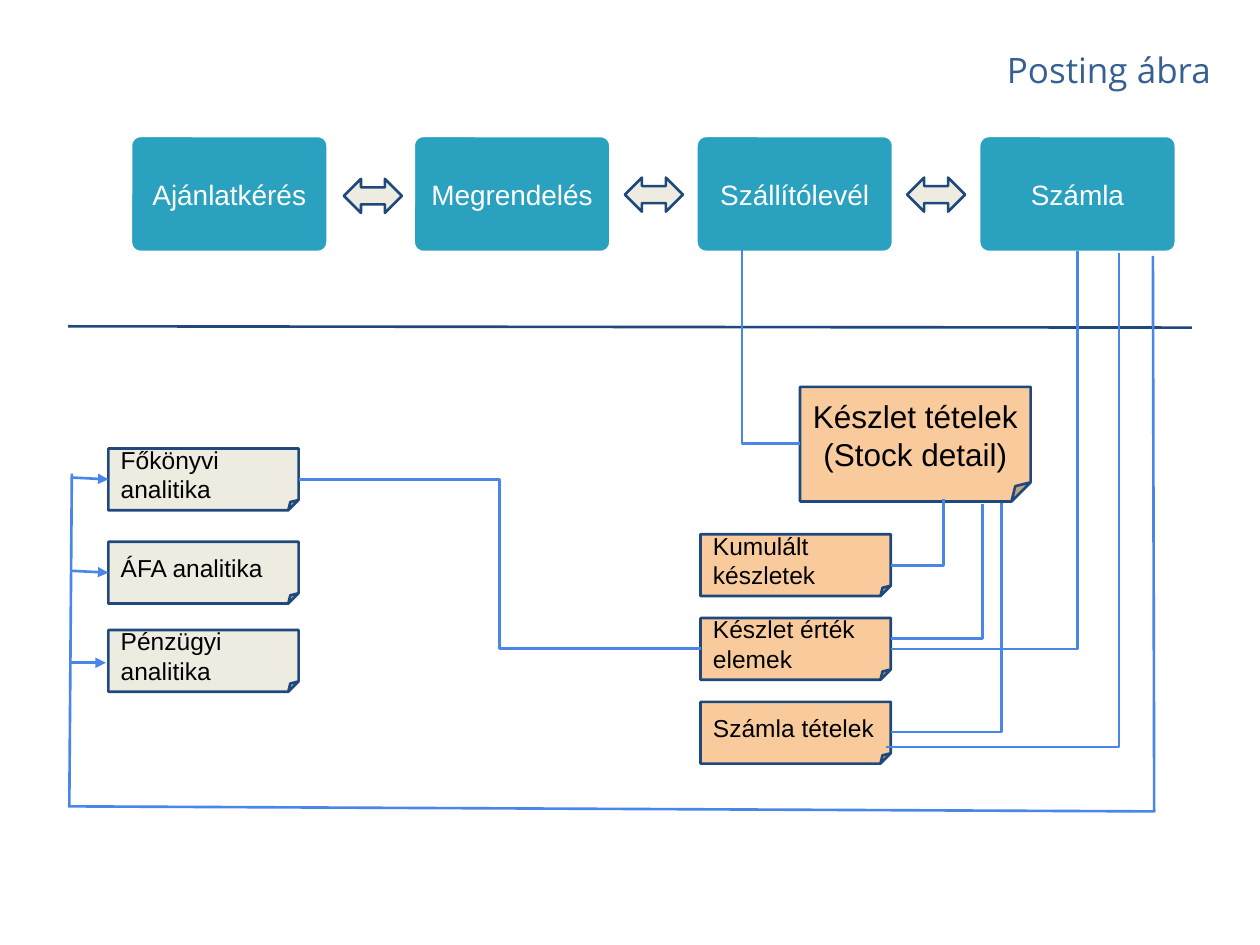
from lxml import etree
from pptx import Presentation
from pptx.dml.color import RGBColor
from pptx.enum.shapes import MSO_CONNECTOR, MSO_SHAPE
from pptx.enum.text import MSO_ANCHOR, PP_ALIGN
from pptx.oxml import parse_xml
from pptx.oxml.ns import nsdecls, qn
from pptx.util import Inches, Pt

STRAIGHT, ELBOW = MSO_CONNECTOR.STRAIGHT, MSO_CONNECTOR.ELBOW
CARD, NOTE, ARROW = (MSO_SHAPE.ROUNDED_RECTANGLE, MSO_SHAPE.FOLDED_CORNER,
                     MSO_SHAPE.LEFT_RIGHT_ARROW)
LEFT, CENTER, RIGHT = PP_ALIGN.LEFT, PP_ALIGN.CENTER, PP_ALIGN.RIGHT
MIDDLE = MSO_ANCHOR.MIDDLE
TEAL, NAVY, BLUE = "2AA2BF", "1F497D", "4A86E8"
CREAM, PEACH, WHITE, BLACK = "EEECE1", "F9CB9C", "FFFFFF", "000000"
color = RGBColor.from_string

deck = Presentation()
deck.slide_width, deck.slide_height = Inches(10), Inches(7.5)
page = deck.slides.add_slide(deck.slide_layouts[6])


def add_box(kind, place, fill, border, lines=(), size=14, ink=BLACK,
            align=LEFT, margin=0.1, weight=1.5):
    box = page.shapes.add_shape(kind, *map(Inches, place))
    box.shadow.inherit = False
    box.fill.solid()
    box.fill.fore_color.rgb = color(fill)
    box.line.color.rgb = color(border)
    box.line.width = Pt(weight)
    frame = box.text_frame
    frame.word_wrap = True
    frame.vertical_anchor = MIDDLE
    frame.margin_left = frame.margin_right = Inches(margin)
    frame.margin_top = frame.margin_bottom = Inches(margin)
    for number, line in enumerate(lines):
        para = frame.add_paragraph() if number else frame.paragraphs[0]
        para.text = line
        para.alignment = align
        para.font.name = "Arial"
        para.font.size = Pt(size)
        para.font.color.rgb = color(ink)
    return box


def add_line(kind, x1, y1, x2, y2, ink=BLUE):
    line = page.shapes.add_connector(kind, *map(Inches, (x1, y1, x2, y2)))
    line.line.color.rgb = color(ink)
    line.line.width = Pt(1.5)
    etree.SubElement(line._element.spPr, qn("a:effectLst"))
    return line


# Title with a soft shadow under the letters
title = page.shapes.add_textbox(*map(Inches, (3.28, 0.32, 6.43, 0.46)))
title.text_frame.word_wrap = True
title.text_frame.vertical_anchor = MIDDLE
para = title.text_frame.paragraphs[0]
para.alignment = RIGHT
span = para.add_run()
span.text = "Posting ábra"
span.font.name = "Open Sans"
span.font.size = Pt(20)
span.font.color.rgb = color("376092")
span.font._element.find(qn("a:solidFill")).addnext(parse_xml(
    f'<a:effectLst {nsdecls("a")}><a:outerShdw blurRad="50800" dist="88900" '
    'dir="2700000" algn="tl"><a:srgbClr val="000000"><a:alpha val="40000"/>'
    '</a:srgbClr></a:outerShdw></a:effectLst>'))

# Document flow: four cards at an equal pitch
STEP_LEFT, STEP_PITCH = 1.02, 2.244
for column, name in enumerate(
        ["Ajánlatkérés", "Megrendelés", "Szállítólevél", "Számla"]):
    card = add_box(CARD, (STEP_LEFT + column * STEP_PITCH, 1.06, 1.6, 0.96),
                   TEAL, WHITE, [name], 16, WHITE, CENTER, 0.07, 4.33)
    card.adjustments[0] = 0.1

add_line(STRAIGHT, 0.54, 2.59, 9.46, 2.6, NAVY)

# Ledger notes on the left, stock notes on the right
NOTE_SIZE = (1.51, 0.49)
ledgers = [add_box(NOTE, (0.86, top, *NOTE_SIZE), CREAM, NAVY, [name])
           for top, name in [(3.56, "Főkönyvi analitika"),
                             (4.3, "ÁFA analitika"),
                             (5, "Pénzügyi analitika")]]
add_box(NOTE, (6.35, 3.07, 1.83, 0.91), PEACH, NAVY,
        ["Készlet tételek", "(Stock detail)"], 18, align=CENTER)
stocks = [add_box(NOTE, (5.56, 4.24 + row * 0.665, *NOTE_SIZE),
                  PEACH, NAVY, [name])
          for row, name in enumerate(["Kumulált készletek",
                                      "Készlet érték elemek",
                                      "Számla tételek"])]

# Elbows that run down first and then sideways: a turned box with its bend at the end
for x1, y1, x2, y2 in [(5.89, 1.97, 6.35, 3.52), (7.49, 3.96, 7.07, 4.49),
                       (8.55, 1.99, 7.07, 5.15), (7.8, 4, 7.07, 5.07),
                       (7.95, 3.99, 7.07, 5.81), (8.88, 2.01, 7.03, 5.93)]:
    middle_x, middle_y = (x1 + x2) / 2, (y1 + y2) / 2
    rightward = x2 > x1
    reach = (y2 - y1) / 2 * (-1 if rightward else 1)
    drop = abs(x2 - x1) / 2
    elbow = add_line(ELBOW, middle_x - reach, middle_y - drop,
                     middle_x + reach, middle_y + drop)
    shape = elbow._element.spPr
    shape.find(qn("a:xfrm")).set("rot", "16200000" if rightward else "5400000")
    bends = shape.find(qn("a:prstGeom")).find(qn("a:avLst"))
    etree.SubElement(bends, qn("a:gd"), name="adj1", fmla="val 100000")

link = add_line(ELBOW, 5.56, 5.15, 2.37, 3.8)
link.begin_connect(stocks[1], 1)
link.end_connect(ledgers[0], 3)

for left, top in [(2.73, 1.42), (4.96, 1.41), (7.2, 1.41)]:
    add_box(ARROW, (left, top, 0.46, 0.27), CREAM, NAVY)

# Route from the invoice round to the ledgers
for points in [[(9.15, 2.03), (9.16, 6.44), (0.54, 6.4)],
               [(0.55, 6.4), (0.57, 3.76)]]:
    start, *rest = [tuple(map(Inches, point)) for point in points]
    builder = page.shapes.build_freeform(*start)
    builder.add_line_segments(rest, close=False)
    route = builder.convert_to_shape()
    route.shadow.inherit = False
    route.fill.background()
    route.line.color.rgb = color(BLUE)
    route.line.width = Pt(1.5)

for x1, y1, x2, y2, ledger in [(0.57, 3.79, 0.86, 3.8, ledgers[0]),
                               (0.56, 4.53, 0.86, 4.54, ledgers[1]),
                               (0.56, 5.26, 0.84, 5.26, None)]:
    pointer = add_line(STRAIGHT, x1, y1, x2, y2)
    if ledger:
        pointer.end_connect(ledger, 1)
    etree.SubElement(pointer.line._get_or_add_ln(), qn("a:tailEnd"),
                     type="triangle")

deck.save("out.pptx")
